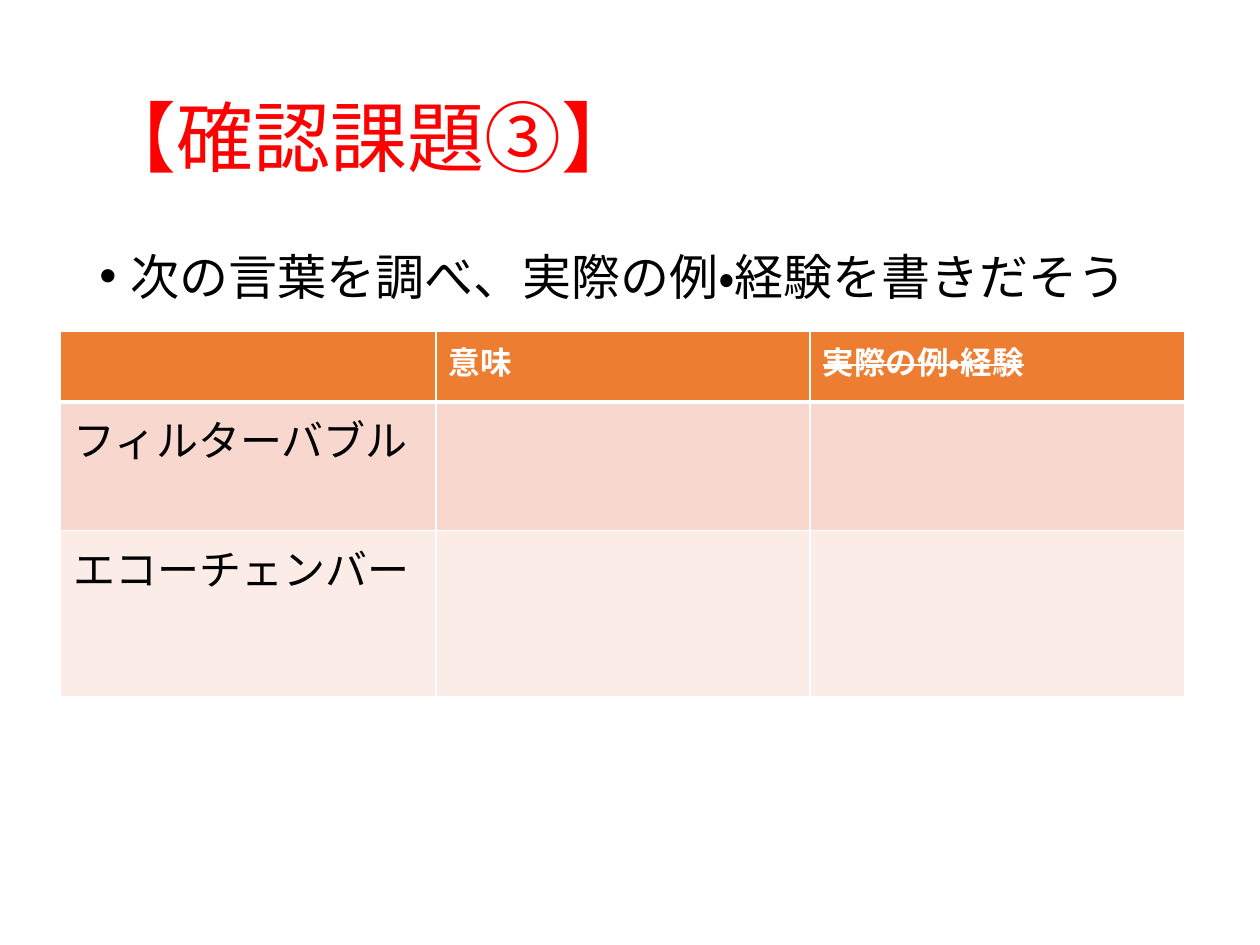
import pptx
import pptx.dml.color
import pptx.enum.lang
import pptx.enum.text
import pptx.oxml
import pptx.oxml.ns
import pptx.util
import lxml.etree

Inches = pptx.util.Inches
WHITE, BLACK, RED, ORANGE = "FFFFFF", "000000", "FF0000", "ED7D31"


def write_text(text_frame, text, size, color, bold=False, strike=False, line_spacing=1.0):
    paragraph = text_frame.paragraphs[0]
    paragraph.line_spacing = line_spacing
    run = paragraph.add_run()
    run.text = text
    run.font.name = "Calibri"
    run.font.size = pptx.util.Pt(size)
    run.font.bold = bold
    run.font.language_id = pptx.enum.lang.MSO_LANGUAGE_ID.JAPANESE
    run.font.color.rgb = pptx.dml.color.RGBColor.from_string(color)
    if strike:
        run.font._element.set("strike", "sngStrike")
    return paragraph


def format_cell(cell, fill, bottom_width):
    """Fill the cell and draw white borders, 1 pt except at the bottom."""
    properties = cell._tc.get_or_add_tcPr()
    for side, width in (("L", 1), ("R", 1), ("T", 1), ("B", bottom_width)):
        properties.append(pptx.oxml.parse_xml(
            f'<a:ln{side} {pptx.oxml.ns.nsdecls("a")} w="{pptx.util.Pt(width)}">'
            f'<a:solidFill><a:srgbClr val="{WHITE}"/></a:solidFill></a:ln{side}>'))
    cell.fill.solid()
    cell.fill.fore_color.rgb = pptx.dml.color.RGBColor.from_string(fill)


presentation = pptx.Presentation()
presentation.slide_width = Inches(10)
presentation.slide_height = Inches(7.5)
slide = presentation.slides.add_slide(presentation.slide_layouts[6])

# Title
title = slide.shapes.add_textbox(Inches(0.69), Inches(0.4), Inches(8.62), Inches(1.45))
title.text_frame.word_wrap = True
title.text_frame.vertical_anchor = pptx.enum.text.MSO_ANCHOR.MIDDLE
write_text(title.text_frame, "【確認課題③】", 44, RED, line_spacing=0.9)

# Bulleted instruction
instruction = slide.shapes.add_textbox(Inches(0.69), Inches(2), Inches(8.62), Inches(0.52))
instruction.text_frame.word_wrap = True
paragraph = write_text(instruction.text_frame, "次の言葉を調べ、実際の例・経験を書きだそう",
                       28, BLACK, line_spacing=0.8)
paragraph.space_before = pptx.util.Pt(10)
paragraph_properties = paragraph._p.get_or_add_pPr()
paragraph_properties.set("marL", str(Inches(0.25)))
paragraph_properties.set("indent", str(-Inches(0.25)))
bullet_font = lxml.etree.SubElement(paragraph_properties, pptx.oxml.ns.qn("a:buFont"))
bullet_font.set("typeface", "Arial")
bullet = lxml.etree.SubElement(paragraph_properties, pptx.oxml.ns.qn("a:buChar"))
bullet.set("char", "•")

# Worksheet table
rows = [
    (0.56, ORANGE, ["", "意味", "実際の例・経験"]),
    (1.02, "F8D7CE", ["フィルターバブル", "", ""]),
    (1.32, "FCECE8", ["エコーチェンバー", "", ""]),
]
table = slide.shapes.add_table(len(rows), 3, Inches(0.48), Inches(2.63),
                               Inches(8.92), Inches(2.9)).table
for column, width in zip(table.columns, (2.98, 2.97, 2.97)):
    column.width = Inches(width)
for row_index, (height, fill, texts) in enumerate(rows):
    is_header = row_index == 0
    table.rows[row_index].height = Inches(height)
    for column_index, text in enumerate(texts):
        cell = table.cell(row_index, column_index)
        format_cell(cell, fill, 3 if is_header else 1)
        if text:
            write_text(cell.text_frame, text, 18 if is_header else 24,
                       WHITE if is_header else BLACK, bold=is_header,
                       strike=is_header and column_index == 2)

presentation.save("out.pptx")
